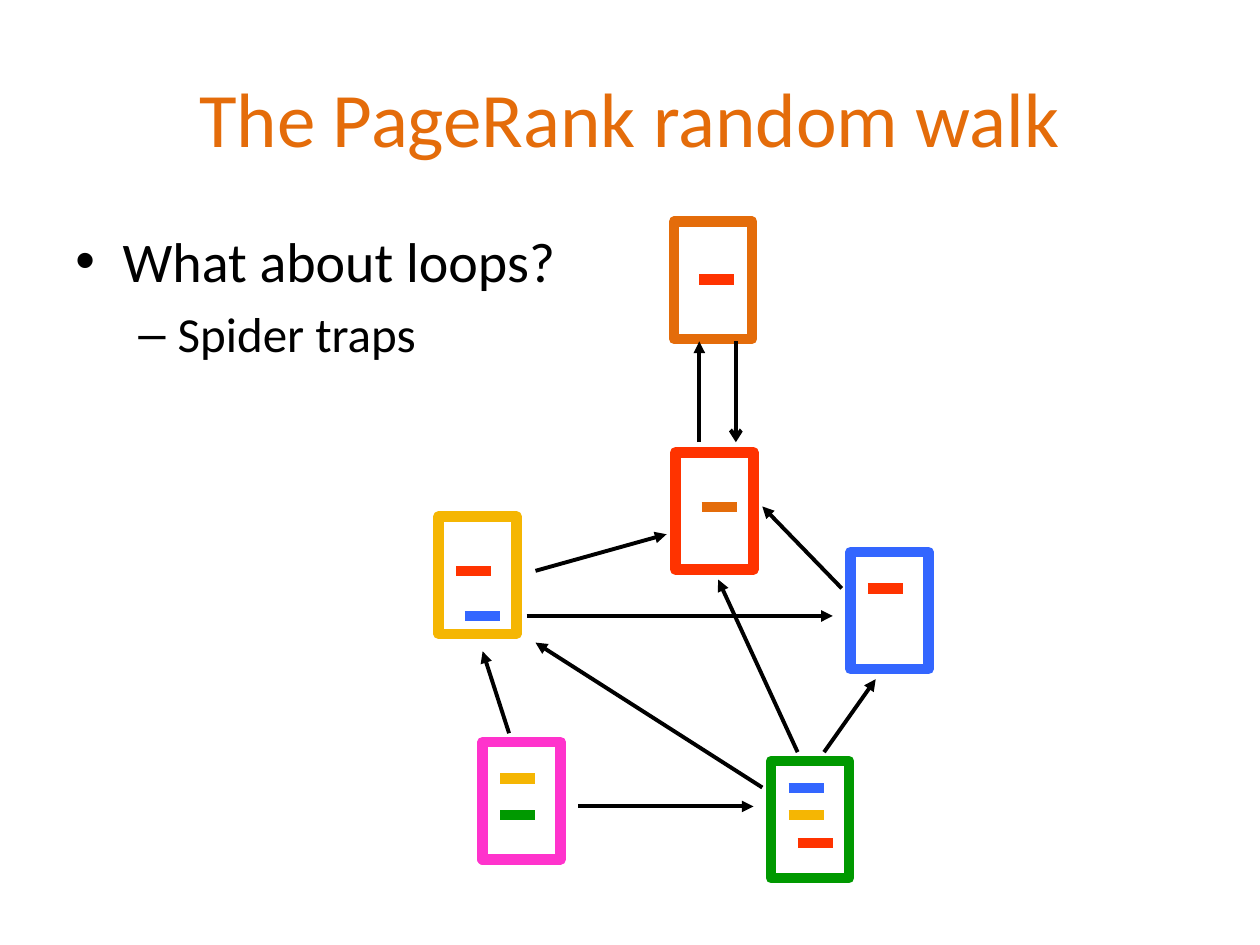
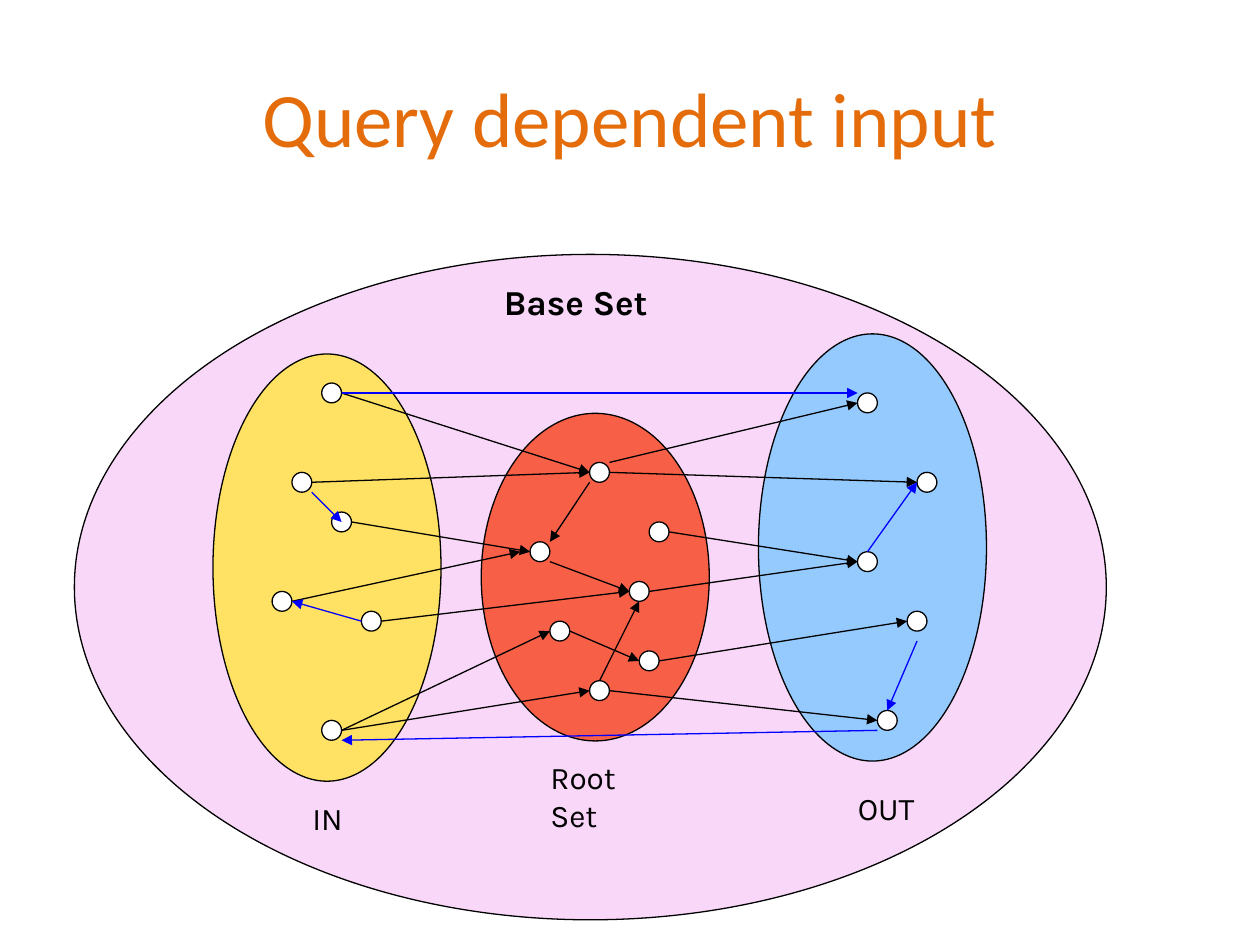
from lxml import etree
from pptx import Presentation
from pptx.dml.color import RGBColor
from pptx.enum.shapes import MSO_CONNECTOR, MSO_SHAPE
from pptx.enum.text import MSO_ANCHOR, PP_ALIGN
from pptx.oxml.ns import qn
from pptx.util import Pt

ORANGE, RED, YELLOW = "E46C0A", "FF3300", "F5B603"
BLUE, GREEN, PINK = "3366FF", "009900", "FF33CC"
BLACK, WHITE, LINK_BLUE = "000000", "FFFFFF", "0000FF"


def rgb(color):
    return RGBColor.from_string(color)


def add_line(s, start, end, color, width, arrow=None):
    c = s.shapes.add_connector(MSO_CONNECTOR.STRAIGHT, *map(Pt, start + end))
    c.line.color.rgb = rgb(color)
    c.line.width = Pt(width)
    if arrow:
        ln = c.line._get_or_add_ln()
        etree.SubElement(ln, qn("a:tailEnd"), type=arrow)
    etree.SubElement(c._element.spPr, qn("a:effectLst"))


prs = Presentation()
prs.slide_width, prs.slide_height = Pt(720), Pt(540)

slides = []
for text in ("The PageRank random walk", "Query dependent input"):
    s = prs.slides.add_slide(prs.slide_layouts[5])
    title = s.shapes.title
    title.left, title.top, title.width, title.height = Pt(36), Pt(21.6), Pt(648), Pt(90)
    tf = title.text_frame
    tf.vertical_anchor = MSO_ANCHOR.MIDDLE
    p = tf.paragraphs[0]
    p.alignment = PP_ALIGN.CENTER
    r = p.add_run()
    r.text = text
    r.font.name, r.font.size = "Calibri", Pt(44)
    r.font.color.rgb = rgb(ORANGE)
    slides.append(s)
walk, query = slides

tf = walk.shapes.add_textbox(Pt(36), Pt(126), Pt(648), Pt(356.4)).text_frame
tf.word_wrap = True
bullets = [
    ("What about loops?", 0, 32, "•", 27, -27),
    ("Spider traps", 1, 28, "–", 58.5, -22.5),
]
for i, (text, level, size, mark, margin, indent) in enumerate(bullets):
    p = tf.add_paragraph() if i else tf.paragraphs[0]
    p.level = level
    p.space_before = Pt(size * 0.2)
    pPr = p._p.get_or_add_pPr()
    pPr.set("marL", str(Pt(margin)))
    pPr.set("indent", str(Pt(indent)))
    etree.SubElement(pPr, qn("a:buFont"), typeface="Arial")
    etree.SubElement(pPr, qn("a:buChar"), char=mark)
    r = p.add_run()
    r.text = text
    r.font.name, r.font.size = "Calibri", Pt(size)
    r.font.color.rgb = rgb(BLACK)

pages = [
    (250.6, 295.2, YELLOW, [(265.7, 352, BLUE), (260.6, 326.2, RED)]),
    (275.8, 424.1, PINK, [(285.8, 465.8, GREEN), (285.8, 445, YELLOW)]),
    (440.6, 434.9, GREEN, [(450.7, 465.8, YELLOW), (450.7, 450.2, BLUE), (455.8, 481.6, RED)]),
    (486, 315.4, BLUE, [(496, 336.2, RED)]),
    (385.9, 258.5, RED, [(401, 289.8, ORANGE)]),
    (385.2, 126.7, ORANGE, [(399.6, 159.8, RED)]),
]
for x, y, color, links in pages:
    sp = walk.shapes.add_shape(MSO_SHAPE.RECTANGLE, Pt(x), Pt(y), Pt(44.6), Pt(67))
    sp.shadow.inherit = False
    sp.fill.solid()
    sp.fill.fore_color.rgb = rgb(WHITE)
    sp.line.color.rgb = rgb(color)
    sp.line.width = Pt(6)
    for link_x, link_y, link_color in links:
        add_line(walk, (link_x, link_y), (link_x + 20, link_y), link_color, 6)

steps = [
    ((330.5, 460.8), (430.6, 460.8)),
    ((290.9, 419), (275.8, 372.2)),
    ((306, 326.2), (380.9, 305.3)),
    ((301, 352), (475.9, 352)),
    ((481, 336.2), (435.6, 289.4)),
    ((455.8, 429.8), (410.4, 331.2)),
    ((470.9, 429.8), (500.4, 388.1)),
    ((435.6, 450), (306, 367.2)),
    ((399.6, 252.7), (399.6, 195.1)),
]
for start, end in steps:
    add_line(walk, start, end, BLACK, 2.25, "triangle")
add_line(walk, (420.5, 195.1), (420.5, 252.7), BLACK, 2.25, "arrow")

UNIT, LEFT, TOP = 5.67, 155.5, 218.9
nodes = [
    (6, 1), (3, 10), (7, 14), (1, 22), (10, 24), (6, 35),
    (33, 9), (39, 15), (27, 17), (37, 21), (29, 25), (38, 28), (33, 31),
    (60, 2), (66, 10), (60, 18), (65, 24), (62, 34),
]
ovals = [
    (42.5, 145.4, 589.7, 380.2, "F2AEF2"),
    (433.4, 190.8, 130.3, 244.1, "95CAFF"),
    (121.7, 202.3, 130.3, 244.1, "FFE163"),
    (275, 236.2, 130.3, 187.2, "F76047"),
]
for col, row in nodes:
    ovals.append((LEFT + (col - 1) * UNIT, TOP + (row - 1) * UNIT, 2 * UNIT, 2 * UNIT, WHITE))
for x, y, w, h, color in ovals:
    sp = query.shapes.add_shape(MSO_SHAPE.OVAL, Pt(x), Pt(y), Pt(w), Pt(h))
    sp.shadow.inherit = False
    sp.fill.solid()
    sp.fill.fore_color.rgb = rgb(color)
    sp.line.color.rgb = rgb(BLACK)
    sp.line.width = Pt(0.75)
    if color == "F2AEF2":
        clr = sp._element.spPr.find(qn("a:solidFill"))[0]
        etree.SubElement(clr, qn("a:alpha"), val="49000")

links = {
    BLACK: [
        (32, 10, 28, 16), (30, 25, 37, 28), (28, 18, 36, 21), (33, 30, 37, 22),
        (7, 1, 32, 9), (34, 9, 65, 10), (34, 8, 59, 2), (38, 21, 59, 18),
        (39, 28, 64, 24), (34, 31, 61, 34), (40, 15, 59, 18), (4, 10, 32, 9),
        (8, 14, 26, 17), (7, 35, 28, 25), (7, 35, 32, 31), (11, 24, 36, 21),
        (2, 22, 25, 17),
    ],
    LINK_BLUE: [
        (4, 11, 7, 14), (9, 24, 2, 22), (7, 1, 59, 1), (61, 35, 7, 36),
        (60, 17, 65, 10), (65, 26, 62, 33),
    ],
}
for color, ends in links.items():
    for x1, y1, x2, y2 in ends:
        start = (LEFT + x1 * UNIT, TOP + y1 * UNIT)
        end = (LEFT + x2 * UNIT, TOP + y2 * UNIT)
        add_line(query, start, end, color, 0.75, "triangle")

labels = [
    ("Root Set", 307.4, 429.8, 82.1, 28.8, 18, True),
    ("IN", 171.4, 452.9, 33.1, 28.8, 18, False),
    ("OUT", 483.1, 447.1, 49.7, 28.8, 18, False),
    ("Base Set", 280.8, 157, 100.8, 31, 20, False),
]
for text, x, y, w, h, size, wrap in labels:
    tf = query.shapes.add_textbox(Pt(x), Pt(y), Pt(w), Pt(h)).text_frame
    tf.word_wrap = wrap
    r = tf.paragraphs[0].add_run()
    r.text = text
    r.font.name, r.font.size, r.font.bold = "Karla", Pt(size), size == 20
    r.font.color.rgb = rgb(BLACK)

prs.save("out.pptx")
